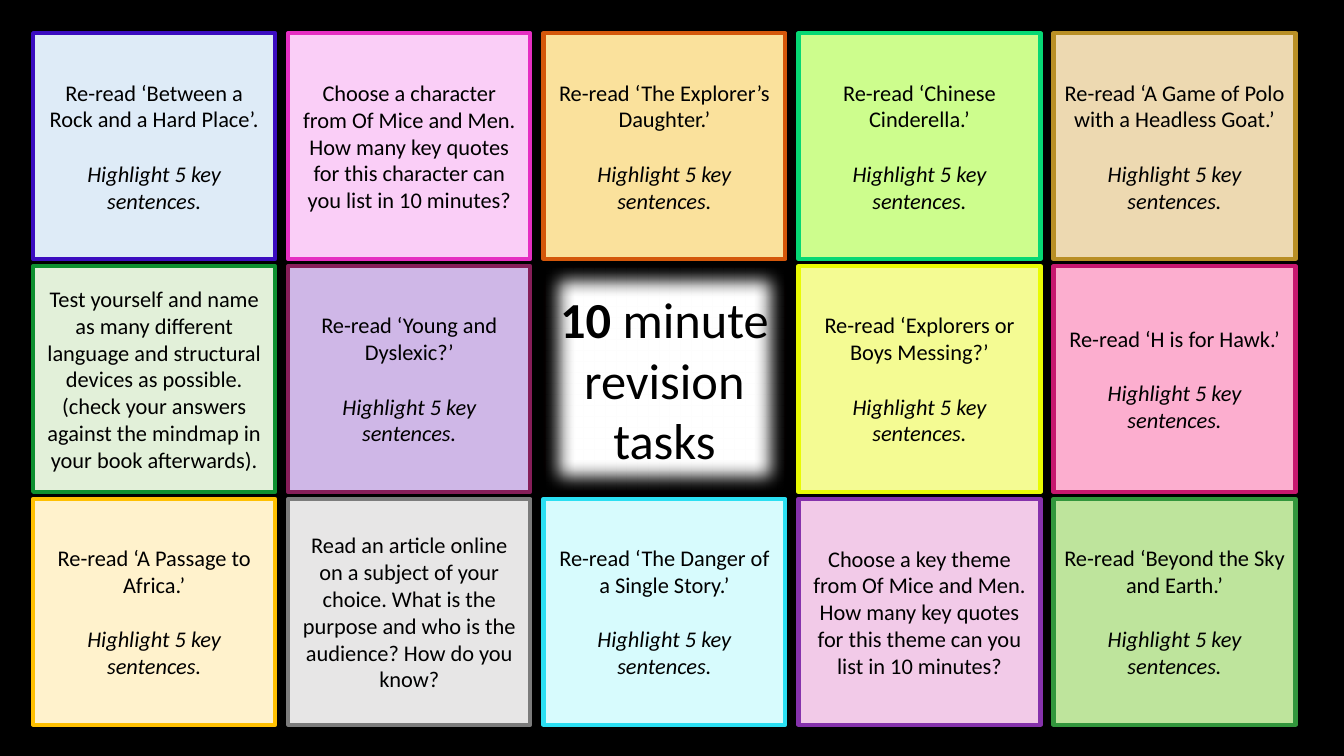
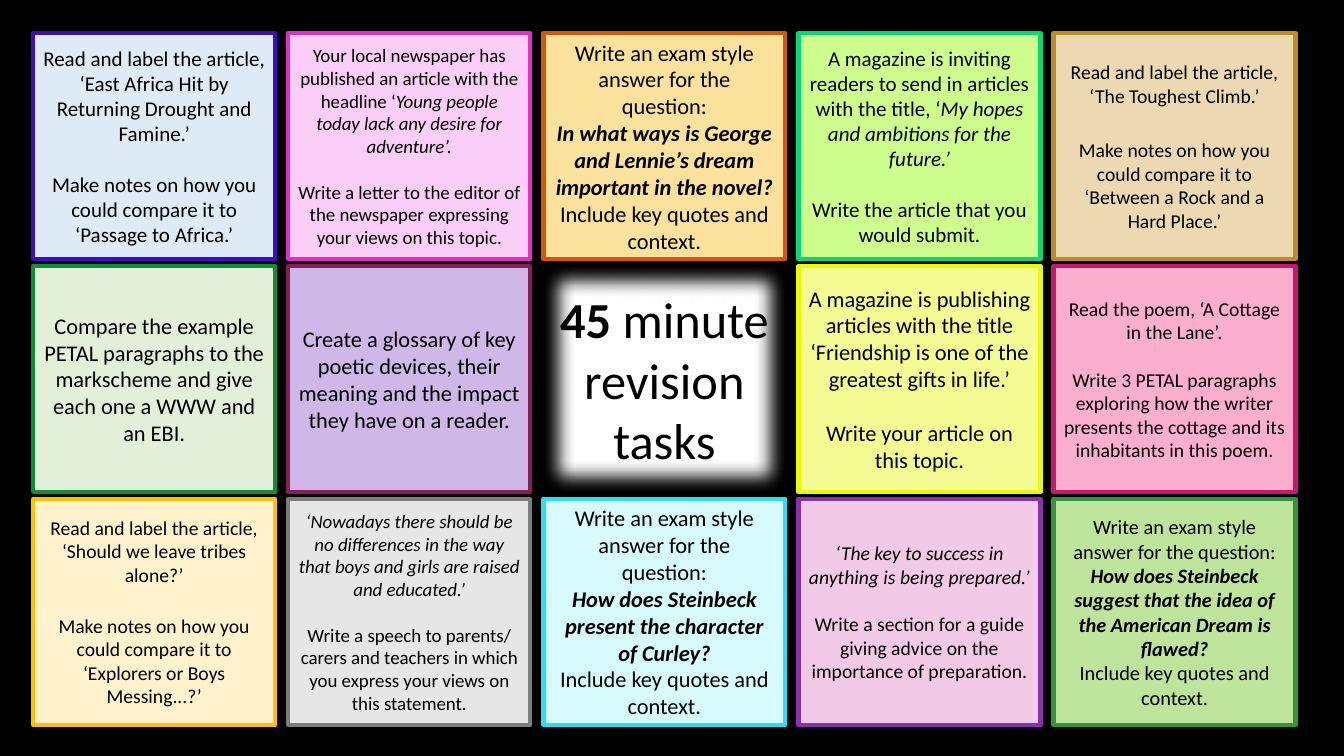
from dataclasses import dataclass

from lxml import etree
from pptx import Presentation
from pptx.dml.color import RGBColor
from pptx.enum.shapes import MSO_SHAPE
from pptx.enum.text import MSO_ANCHOR, MSO_AUTO_SIZE, PP_ALIGN
from pptx.oxml.ns import qn
from pptx.util import Inches, Pt

RECTANGLE = MSO_SHAPE.RECTANGLE
MIDDLE = MSO_ANCHOR.MIDDLE
NO_AUTOFIT = MSO_AUTO_SIZE.NONE
CENTER = PP_ALIGN.CENTER
TITLE_ONLY = 5


@dataclass(frozen=True)
class Theme:
    font: str = "Calibri"
    ink: str = "000000"
    backdrop: str = "000000"
    title_fill: str = "FFFFFF"
    title_line: str = "D60817"
    title_size: float = 36
    border: float = 3
    line_height: float = 1.22
    soft_edge: float = 12.5
    tiles: tuple = (
        ("DEEBF7", "3B0CC0"), ("FACEF7", "E52FC2"), ("FAE19C", "D4570A"),
        ("CDFD8D", "06D874"), ("EDD9B1", "B98F25"),
        ("E2F0D9", "0E9030"), ("CFB7E7", "861E59"),
        ("F4FB93", "E9FB03"), ("FCAECF", "C7176F"),
        ("FFF2CC", "FFC000"), ("E7E6E6", "7C7C7C"), ("D7FBFD", "2ADFF2"),
        ("F2CAE8", "8632AC"), ("BEE49C", "32963C"),
    )


@dataclass(frozen=True)
class Task:
    paragraphs: tuple
    size: float = 16
    gap: float = 16


def plain(text):
    return (text, False, False)


def italic(text):
    return (text, False, True)


def strong(text):
    return (text, True, True)


def task(*paragraphs, size=16, gap=None):
    lines = tuple((plain(line),) if isinstance(line, str) else line for line in paragraphs)
    return Task(lines, size, size if gap is None else gap)


def reread(article):
    return task(f"Re-read {article}", (italic("Highlight 5 key sentences."),))


def list_quotes(choice, subject):
    return task(f"Choose a {choice} from Of Mice and Men. How many key quotes "
                f"for this {subject} can you list in 10 minutes?")


def compare(article, other, size, gap):
    return task(f"Read and label the article, {article}",
                f"Make notes on how you could compare it to {other}", size=size, gap=gap)


def exam(question, size=16):
    return task("Write an exam style answer for the question:",
                (strong(question),), "Include key quotes and context.", size=size, gap=0)


TEN_MINUTE_TASKS = (
    reread("‘Between a Rock and a Hard Place’."),
    list_quotes("character", "character"),
    reread("‘The Explorer’s Daughter.’"),
    reread("‘Chinese Cinderella.’"),
    reread("‘A Game of Polo with a Headless Goat.’"),
    task("Test yourself and name as many different language and structural devices "
         "as possible. (check your answers against the mindmap in your book afterwards)."),
    reread("‘Young and Dyslexic?’"),
    reread("‘Explorers or Boys Messing?’"),
    reread("‘H is for Hawk.’"),
    reread("‘A Passage to Africa.’"),
    task("Read an article online on a subject of your choice. What is the purpose "
         "and who is the audience? How do you know?"),
    reread("‘The Danger of a Single Story.’"),
    list_quotes("key theme", "theme"),
    reread("‘Beyond the Sky and Earth.’"),
)

FORTY_FIVE_MINUTE_TASKS = (
    compare("‘East Africa Hit by Returning Drought and Famine.’",
            "‘Passage to Africa.’", 15, 15),
    task((plain("Your local newspaper has published an article with the headline ‘"),
          italic("Young people today lack any desire for adventure’.")),
         "Write a letter to the editor of the newspaper expressing your views on this topic.",
         size=13.5),
    exam("In what ways is George and Lennie’s dream important in the novel?"),
    task((plain("A magazine is inviting readers to send in articles with the title, ‘"),
          italic("My hopes and ambitions for the future.’")),
         "Write the article that you would submit.", size=15),
    compare("‘The Toughest Climb.’", "‘Between a Rock and a Hard Place.’", 14, 18),
    task("Compare the example PETAL paragraphs to the markscheme and give each one "
         "a WWW and an EBI."),
    task("Create a glossary of key poetic devices, their meaning and the impact "
         "they have on a reader."),
    task("A magazine is publishing articles with the title ‘Friendship is one of "
         "the greatest gifts in life.’", "Write your article on this topic."),
    task("Read the poem, ‘A Cottage in the Lane’.",
         "Write 3 PETAL paragraphs exploring how the writer presents the cottage "
         "and its inhabitants in this poem.", size=14),
    compare("‘Should we leave tribes alone?’", "‘Explorers or Boys Messing...?’", 14, 16),
    task((italic("‘Nowadays there should be no differences in the way that boys and "
                 "girls are raised and educated.’"),),
         "Write a speech to parents/ carers and teachers in which you express your "
         "views on this statement.", size=13.5),
    exam("How does Steinbeck present the character of Curley?"),
    task((italic("‘The key to success in anything is being prepared.’"),),
         "Write a section for a guide giving advice on the importance of preparation.",
         size=14),
    exam("How does Steinbeck suggest that the idea of the American Dream is flawed?", 14.5),
)


class TaskBoard:
    columns, rows = 5, 3
    title_cell = (1, 2)
    margin = 0.33
    column_step, row_step = 2.53, 2.31
    tile_width, tile_height = 2.4, 2.24

    def __init__(self, deck, theme):
        self.deck = deck
        self.theme = theme
        self.page = None
        backdrop = deck.slide_master.background.fill
        backdrop.solid()
        backdrop.fore_color.rgb = RGBColor.from_string(theme.backdrop)

    def bounds(self, row, column):
        return (Inches(self.margin + column * self.column_step),
                Inches(self.margin + row * self.row_step),
                Inches(self.tile_width), Inches(self.tile_height))

    def paint(self, box, fill, line):
        box.fill.solid()
        box.fill.fore_color.rgb = RGBColor.from_string(fill)
        box.line.color.rgb = RGBColor.from_string(line)
        box.line.width = Pt(self.theme.border)
        frame = box.text_frame
        frame.word_wrap = True
        frame.auto_size = NO_AUTOFIT
        frame.vertical_anchor = MIDDLE

    def add_text(self, box, paragraphs, size, gap=0):
        frame = box.text_frame
        for index, spans in enumerate(paragraphs):
            para = frame.add_paragraph() if index else frame.paragraphs[0]
            para.alignment = CENTER
            if index and gap:
                para.space_before = Pt(round(gap * self.theme.line_height, 1))
            for text, bold, slanted in spans:
                span = para.add_run()
                span.text = text
                span.font.name = self.theme.font
                span.font.size = Pt(size)
                span.font.bold = bold
                span.font.italic = slanted
                span.font.color.rgb = RGBColor.from_string(self.theme.ink)

    def title(self, minutes):
        box = self.page.shapes.title
        box.left, box.top, box.width, box.height = self.bounds(*self.title_cell)
        self.paint(box, self.theme.title_fill, self.theme.title_line)
        effects = etree.SubElement(box.element.spPr, qn("a:effectLst"))
        etree.SubElement(effects, qn("a:softEdge"), rad=str(Pt(self.theme.soft_edge)))
        heading = ((minutes, True, False), plain(" minute revision tasks"))
        self.add_text(box, (heading,), self.theme.title_size)

    def tile(self, cell, colors, job):
        box = self.page.shapes.add_shape(RECTANGLE, *self.bounds(*cell))
        box.shadow.inherit = False
        self.paint(box, *colors)
        self.add_text(box, job.paragraphs, job.size, job.gap)

    def board(self, minutes, jobs):
        self.page = self.deck.slides.add_slide(self.deck.slide_layouts[TITLE_ONLY])
        self.title(minutes)
        cells = [(row, column) for row in range(self.rows) for column in range(self.columns)
                 if (row, column) != self.title_cell]
        for cell, colors, job in zip(cells, self.theme.tiles, jobs):
            self.tile(cell, colors, job)


def main():
    deck = Presentation()
    deck.slide_width, deck.slide_height = Inches(13.33), Inches(7.5)
    boards = TaskBoard(deck, Theme())
    boards.board("10", TEN_MINUTE_TASKS)
    boards.board("45", FORTY_FIVE_MINUTE_TASKS)
    deck.save("out.pptx")


if __name__ == "__main__":
    main()
